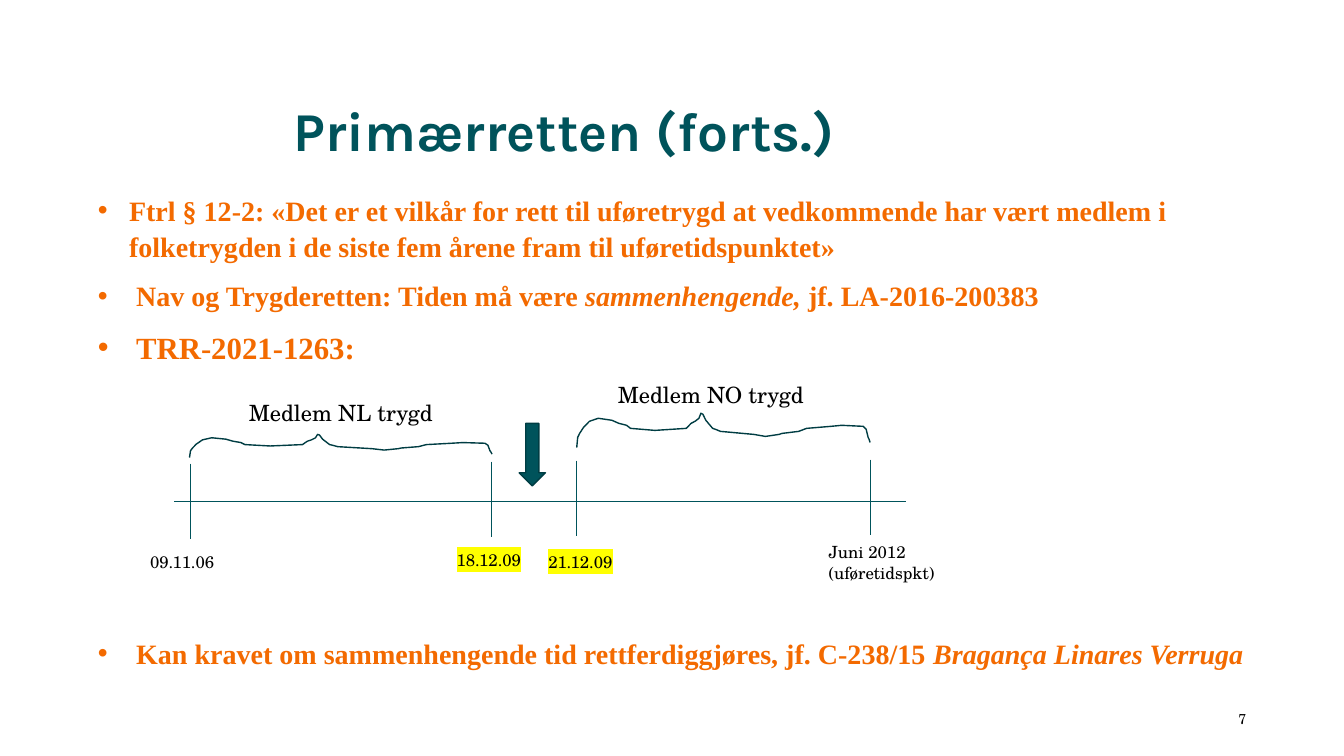
from lxml import etree
from pptx import Presentation
from pptx.dml.color import RGBColor
from pptx.enum.shapes import MSO_CONNECTOR, MSO_SHAPE
from pptx.enum.text import MSO_ANCHOR, MSO_AUTO_SIZE, PP_ALIGN
from pptx.oxml.ns import qn
from pptx.util import Inches, Pt

LINE, DOWN = MSO_CONNECTOR.STRAIGHT, MSO_SHAPE.DOWN_ARROW
LEFT, RIGHT = PP_ALIGN.LEFT, PP_ALIGN.RIGHT
TOP, MIDDLE, BOTTOM = MSO_ANCHOR.TOP, MSO_ANCHOR.MIDDLE, MSO_ANCHOR.BOTTOM
FIXED = MSO_AUTO_SIZE.NONE
TEAL, DARK, ORANGE, BLACK, YELLOW = "00535B", "003D43", "F36A00", "000000", "FFFF00"
HEAD, SERIF, BODY = "Karla", "TeX Gyre Schola", "Times New Roman"

# Hand-drawn brace on a grid of 300 by 34
BRACE = [(0, 34), (1, 24), (3, 20), (7, 14), (13, 8), (22, 5), (36, 7), (43, 10),
         (51, 12), (55, 15), (80, 17), (112, 15), (117, 10), (121, 8), (125, 5),
         (127, 0), (129, 1), (132, 7), (139, 15), (142, 16), (147, 18), (181, 21),
         (193, 23), (207, 21), (210, 20), (227, 18), (235, 15), (260, 13),
         (271, 12), (293, 13), (296, 16), (298, 24), (299, 26), (300, 29)]

BULLETS = [
    (20, 0.31, 0, [("Ftrl § 12-2: «Det er et vilkår for rett til uføretrygd at vedkommende har "
                    "vært medlem i folketrygden i de siste fem årene fram til "
                    "uføretidspunktet»", False)]),
    (20, 0.38, 10, [("Nav og Trygderetten: Tiden må være ", False),
                    ("sammenhengende, ", True), ("jf. LA-2016-200383", False)]),
    (22, 0.38, 10, [("TRR-2021-1263:", False)]),
    (20, 0.38, 192, [("Kan kravet om sammenhengende tid rettferdiggjøres, jf. C-238/15 ", False),
                     ("Bragança Linares Verruga", True)]),
]


def color(value):
    return RGBColor.from_string(value)


def place(shape, box):
    shape.left, shape.top, shape.width, shape.height = map(Inches, box)


def write(para, text, size=12, font=SERIF, fill=BLACK, bold=False, italic=False, mark=None):
    run = para.add_run()
    run.text = text
    face = run.font
    face.size, face.bold, face.italic = Pt(size), bold, italic
    face.color.rgb = color(fill)
    if mark:
        light = etree.SubElement(run._r.get_or_add_rPr(), qn("a:highlight"))
        etree.SubElement(light, qn("a:srgbClr")).set("val", mark)
    face.name = font


def setup(frame, anchor=TOP, side=0.1, edge=0.05):
    frame.word_wrap, frame.auto_size = True, FIXED
    frame.vertical_anchor = anchor
    frame.margin_left = frame.margin_right = Inches(side)
    frame.margin_top = frame.margin_bottom = Inches(edge)


def label(slide, box, lines, align=LEFT, anchor=TOP, side=0.1, **style):
    frame = slide.shapes.add_textbox(*map(Inches, box)).text_frame
    setup(frame, anchor, side)
    for i, text in enumerate(lines):
        para = frame.add_paragraph() if i else frame.paragraphs[0]
        para.alignment = align
        write(para, text, **style)


def title(slide, box):
    shape = slide.shapes.title
    place(shape, box)
    setup(shape.text_frame, BOTTOM, side=0)
    para = shape.text_frame.paragraphs[0]
    para.alignment, para.line_spacing = LEFT, 0.9
    write(para, "Primærretten (forts.)", size=39.1, font=HEAD, fill=TEAL, bold=True)


def bullets(slide, box):
    shape = slide.placeholders[1]
    place(shape, box)
    frame = shape.text_frame
    setup(frame, side=0, edge=0)
    for i, (size, indent, gap, runs) in enumerate(BULLETS):
        para = frame.add_paragraph() if i else frame.paragraphs[0]
        props = para._p.get_or_add_pPr()
        props.set("marL", str(Inches(indent)))
        props.set("indent", str(-Inches(indent)))
        etree.SubElement(props, qn("a:buChar")).set("char", "•")
        para.alignment, para.line_spacing, para.space_before = LEFT, 1.06, Pt(gap)
        for text, italic in runs:
            write(para, text, size=size, font=BODY, fill=ORANGE, bold=True, italic=italic)


def rule(slide, x1, y1, x2, y2):
    line = slide.shapes.add_connector(LINE, *map(Inches, (x1, y1, x2, y2)))
    line.line.color.rgb, line.line.width = color(TEAL), Pt(0.5)
    etree.SubElement(line._element.spPr, qn("a:effectLst"))


def brace(slide, box):
    left, top, width, height = box
    dots = [(Inches(left + x / 300 * width), Inches(top + y / 34 * height)) for x, y in BRACE]
    form = slide.shapes.build_freeform(*dots[0])
    form.add_line_segments(dots[1:], close=False)
    shape = form.convert_to_shape()
    shape.shadow.inherit = False
    shape.fill.background()
    shape.line.color.rgb, shape.line.width = color(DARK), Pt(1)


def timeline(slide, box):
    left, top, width, height = box
    axis = top + 1.24
    rule(slide, left, axis, left + width, axis)
    for x, rise in ((0.16, 0.37), (3.14, 0.39), (3.99, 0.4), (6.9, 0.41)):
        rule(slide, left + x, axis - rise, left + x, axis - rise + 0.75)
    for x, y, wide, lines, mark in (
            (-0.34, 0.45, 0.98, ["09.11.06"], None),
            (2.7, 0.43, 0.86, ["18.12.09"], YELLOW),
            (3.61, 0.45, 0.86, ["21.12.09"], YELLOW),
            (6.39, 0.36, 1.43, ["Juni 2012", "(uføretidspkt)"], None)):
        label(slide, (left + x, axis + y, wide, 0.1 + 0.2 * len(lines)), lines, mark=mark)
    for x, y, text in ((0.64, 0.18, "Medlem NL trygd"), (4.3, 0, "Medlem NO trygd")):
        label(slide, (left + x, top + y, 2.06, 0.37), [text], size=16)
    brace(slide, (left + 0.15, top + 0.58, 3, 0.23))
    brace(slide, (left + 3.99, top + 0.37, 2.91, 0.34))

    arrow = slide.shapes.add_shape(DOWN, *map(Inches, (left + 3.42, top + 0.47, 0.26, 0.62)))
    arrow.shadow.inherit = False
    arrow.fill.solid()
    arrow.fill.fore_color.rgb = color(TEAL)
    arrow.line.color.rgb, arrow.line.width = color(DARK), Pt(1)


def main():
    deck = Presentation()
    deck.slide_width, deck.slide_height = Inches(13.33), Inches(7.5)
    slide = deck.slides.add_slide(deck.slide_layouts[1])
    title(slide, (2.91, 0.72, 5.39, 0.95))
    bullets(slide, (0.97, 1.9, 11.76, 5.24))
    timeline(slide, (1.73, 3.73, 7.26, 2.1))
    label(slide, (11.74, 7.01, 0.62, 0.25), ["7"], align=RIGHT, anchor=MIDDLE, side=0, size=10.2)
    deck.save("out.pptx")


if __name__ == "__main__":
    main()
